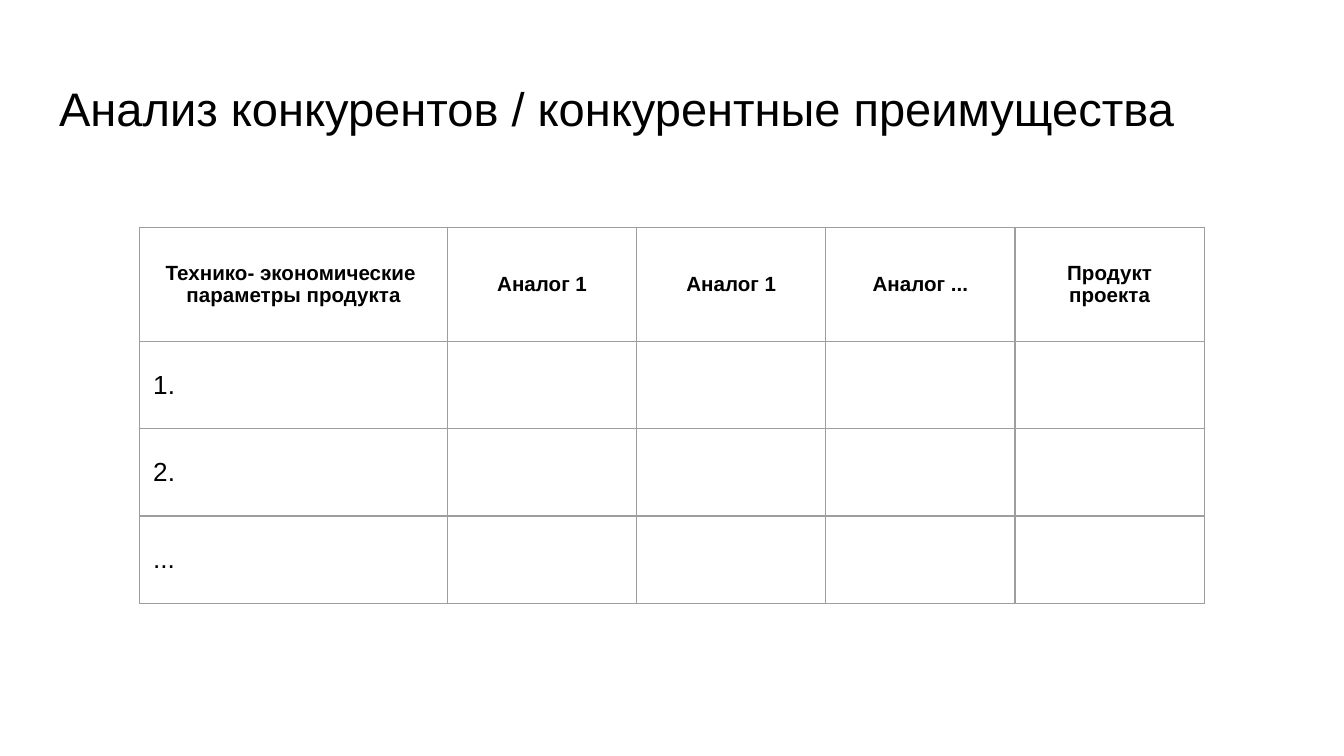
from dataclasses import dataclass

from lxml.etree import SubElement
from pptx import Presentation
from pptx.dml.color import RGBColor
from pptx.enum.text import MSO_ANCHOR, PP_ALIGN
from pptx.oxml.ns import qn
from pptx.util import Inches, Pt

FONT = "Arial"
BLACK = "000000"
BORDER = "9E9E9E"
MARGIN = Inches(0.1)


@dataclass
class TextStyle:
    size: float
    bold: bool = False
    align: PP_ALIGN = PP_ALIGN.LEFT


TITLE = TextStyle(25.2)
HEADER = TextStyle(11, bold=True, align=PP_ALIGN.CENTER)
BODY = TextStyle(14)

HEADINGS = ["Технико- экономические  параметры продукта",
            "Аналог 1", "Аналог 1", "Аналог ...", "Продукт проекта"]
PARAMETERS = ["1.", "2.", "..."]
TABLE_WIDTH = 7.92
FIRST_COL = 2.29
OTHER_COL = (TABLE_WIDTH - FIRST_COL) / (len(HEADINGS) - 1)
COL_WIDTHS = [FIRST_COL] + [OTHER_COL] * (len(HEADINGS) - 1)
ROW_HEIGHTS = [0.85] + [0.65] * len(PARAMETERS)


def color(value: str) -> RGBColor:
    return RGBColor.from_string(value)


def style_text(tf, style: TextStyle) -> None:
    for p in tf.paragraphs:
        p.alignment = style.align
        for r in p.runs:
            r.font.name = FONT
            r.font.size = Pt(style.size)
            r.font.bold = style.bold
            r.font.color.rgb = color(BLACK)


def set_borders(cell) -> None:
    tc_pr = cell._tc.get_or_add_tcPr()
    for side in ("a:lnL", "a:lnR", "a:lnT", "a:lnB"):
        ln = SubElement(tc_pr, qn(side), w=str(Pt(0.75)))
        fill = SubElement(ln, qn("a:solidFill"))
        SubElement(fill, qn("a:srgbClr"), val=BORDER)


def fill_cell(cell, text: str, style: TextStyle) -> None:
    set_borders(cell)
    cell.fill.background()
    cell.vertical_anchor = MSO_ANCHOR.MIDDLE
    cell.margin_left = cell.margin_right = MARGIN
    cell.margin_top = cell.margin_bottom = MARGIN
    if text:
        cell.text_frame.text = text
        style_text(cell.text_frame, style)


def add_title(s, text: str) -> None:
    title = s.shapes.title
    title.left, title.top = Inches(0.34), Inches(0.49)
    title.width, title.height = Inches(9.32), Inches(0.63)
    tf = title.text_frame
    tf.text = text
    tf.word_wrap = True
    tf.vertical_anchor = MSO_ANCHOR.MIDDLE
    tf.margin_left = tf.margin_right = MARGIN
    tf.margin_top = tf.margin_bottom = MARGIN
    style_text(tf, TITLE)


def add_comparison_table(s) -> None:
    table = s.shapes.add_table(
        len(ROW_HEIGHTS), len(COL_WIDTHS), Inches(1.04), Inches(1.69),
        Inches(TABLE_WIDTH), Inches(sum(ROW_HEIGHTS))).table
    table.horz_banding = False
    table.first_row = False
    for column, width in zip(table.columns, COL_WIDTHS):
        column.width = Inches(width)
    for row, height in zip(table.rows, ROW_HEIGHTS):
        row.height = Inches(height)

    # Header row, then one row per parameter with blank values
    blanks = [""] * (len(HEADINGS) - 1)
    contents = [HEADINGS] + [[name] + blanks for name in PARAMETERS]
    for i, texts in enumerate(contents):
        for j, text in enumerate(texts):
            fill_cell(table.cell(i, j), text, BODY if i else HEADER)


def main() -> None:
    # Widescreen 16:9 page
    prs = Presentation()
    prs.slide_width = Inches(10)
    prs.slide_height = prs.slide_width * 9 // 16
    s = prs.slides.add_slide(prs.slide_layouts[5])
    add_title(s, "Анализ конкурентов / конкурентные преимущества")
    add_comparison_table(s)
    prs.save("out.pptx")


if __name__ == "__main__":
    main()
